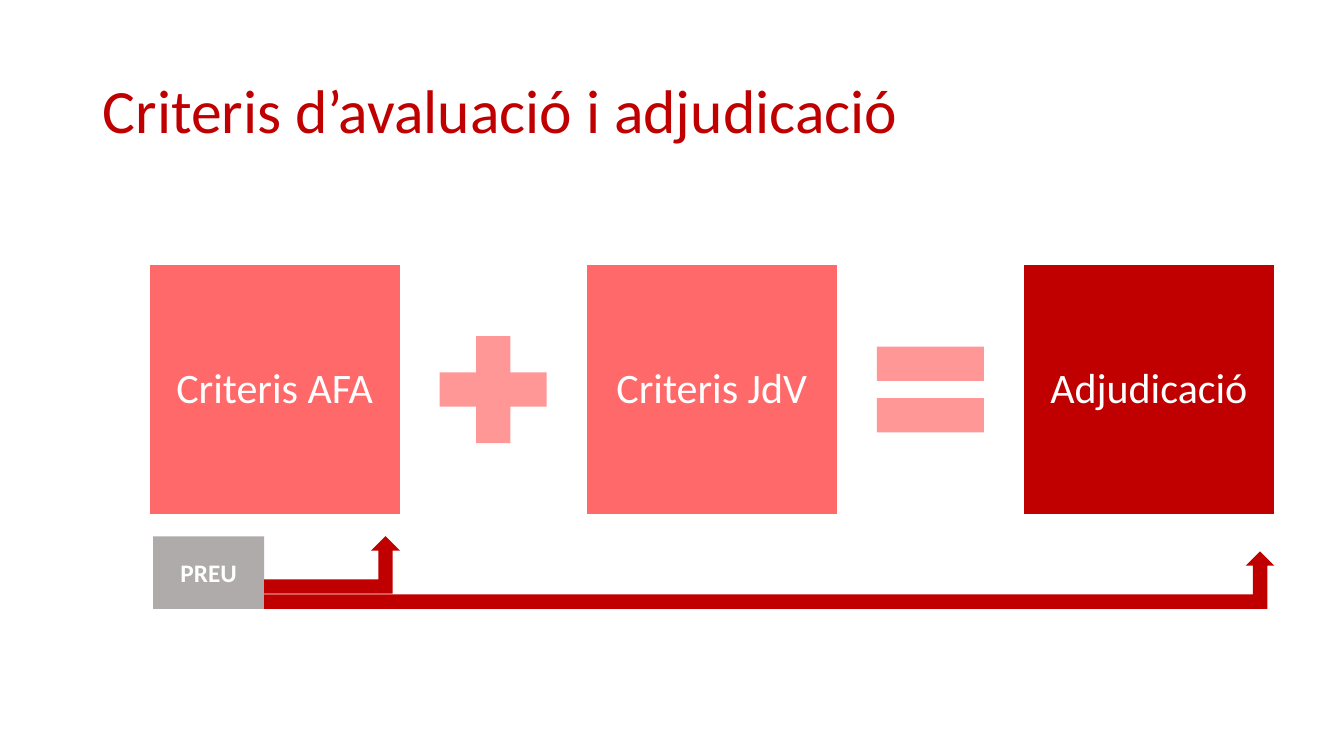
from dataclasses import dataclass

from pptx import Presentation
from pptx.dml.color import RGBColor as Rgb
from pptx.enum.shapes import MSO_SHAPE as Form
from pptx.enum.text import MSO_ANCHOR as Anchor, MSO_AUTO_SIZE as Fit, PP_ALIGN as Align
from pptx.util import Inches, Pt


@dataclass(frozen=True)
class Theme:
    font: str = "Calibri"
    red: str = "C00000"
    coral: str = "FF6969"
    pink: str = "FF9797"
    grey: str = "AFABAB"
    white: str = "FFFFFF"
    title: int = 44
    term: int = 30
    label: int = 18


THEME = Theme()


def write(shape, text, size, color, align=Align.CENTER, bold=False, lines=1.0, inset=None):
    frame = shape.text_frame
    frame.word_wrap = True
    frame.auto_size = Fit.NONE
    frame.vertical_anchor = Anchor.MIDDLE
    if inset is not None:
        frame.margin_left = frame.margin_right = Inches(inset)
        frame.margin_top = frame.margin_bottom = Inches(inset)
    para = frame.paragraphs[0]
    para.alignment, para.line_spacing = align, lines
    run = para.add_run()
    run.text = text
    font = run.font
    font.name, font.size, font.bold = THEME.font, Pt(size), bold
    font.color.rgb = Rgb.from_string(color)


def draw(slide, form, box, fill, edge=None):
    shape = slide.shapes.add_shape(form, *map(Inches, box))
    shape.shadow.inherit = False
    shape.fill.solid()
    shape.fill.fore_color.rgb = Rgb.from_string(fill)
    if edge:
        shape.line.color.rgb = Rgb.from_string(edge)
        shape.line.width = Pt(1)
    else:
        shape.line.fill.background()
    return shape


def head(slide, box, text):
    title = slide.shapes.title
    title.left, title.top, title.width, title.height = map(Inches, box)
    write(title, text, THEME.title, THEME.red, align=Align.LEFT, lines=0.9)


def sum_row(slide, box, terms, signs):
    """Square terms as high as the box, with a sign centred in each space between them."""
    left, top, width, side = box
    mark = 0.58 * side
    pitch = (width - side) / (len(terms) - 1)
    for col, (text, form, fill) in enumerate(terms):
        square = (left + col * pitch, top, side, side)
        term = draw(slide, form, square, fill, edge=THEME.white)
        write(term, text, THEME.term, THEME.white, lines=0.9, inset=0.04)
    for col, form in enumerate(signs):
        mid = left + col * pitch + (pitch + side) / 2
        square = (mid - mark / 2, top + (side - mark) / 2, mark, mark)
        draw(slide, form, square, THEME.pink)


def price(slide, box, text, reach):
    """Label at the left, with one arrow from its right edge to each width in reach."""
    left, top, width, height = box
    label, step = 1.1, 0.15
    tag = draw(slide, Form.RECTANGLE, (left, top, label, height), THEME.grey)
    write(tag, text, THEME.label, THEME.white, bold=True)
    for row, share in enumerate(reach):
        arrow = (left + label, top + row * step, share * width - label, height - step)
        draw(slide, Form.BENT_UP_ARROW, arrow, THEME.red)


def main():
    deck = Presentation()
    deck.slide_width, deck.slide_height = Inches(13.33), Inches(7.5)
    slide = deck.slides.add_slide(deck.slide_layouts[5])
    head(slide, (0.92, 0.4, 11.5, 1.45), "Criteris d’avaluació i adjudicació")
    terms = [
        ("Criteris AFA", Form.RECTANGLE, THEME.coral),
        ("Criteris JdV", Form.FLOWCHART_PROCESS, THEME.coral),
        ("Adjudicació", Form.FLOWCHART_PROCESS, THEME.red),
    ]
    sum_row(slide, (1.48, 2.62, 11.16, 2.49), terms, [Form.MATH_PLUS, Form.MATH_EQUAL])
    price(slide, (1.52, 5.32, 11.12, 0.72), "PREU", [0.22, 1])
    deck.save("out.pptx")


if __name__ == "__main__":
    main()
